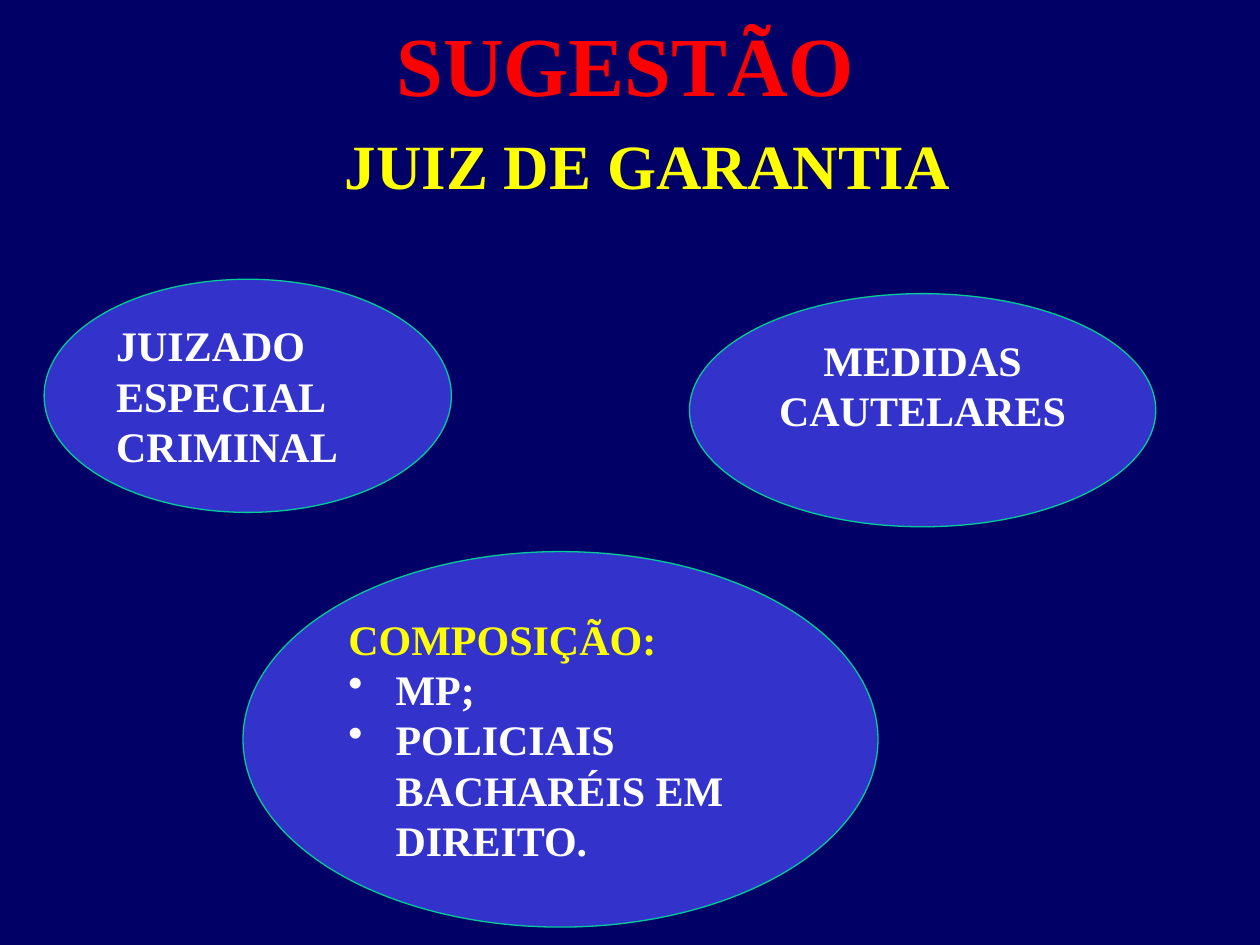
from lxml import etree
from pptx import Presentation
from pptx.dml.color import RGBColor
from pptx.enum.shapes import MSO_SHAPE
from pptx.enum.text import MSO_ANCHOR, MSO_AUTO_SIZE, PP_ALIGN
from pptx.oxml.ns import qn
from pptx.util import Cm, Pt

NAVY = RGBColor(0x00, 0x00, 0x66)
BLUE = RGBColor(0x33, 0x33, 0xCC)
GREEN = RGBColor(0x00, 0xCC, 0x99)
RED = RGBColor(0xFF, 0x00, 0x00)
YELLOW = RGBColor(0xFF, 0xFF, 0x00)
WHITE = RGBColor(0xFF, 0xFF, 0xFF)

OVAL = MSO_SHAPE.OVAL
TOP = MSO_ANCHOR.TOP
NO_FIT = MSO_AUTO_SIZE.NONE
LEFT, CENTER, JUSTIFY = PP_ALIGN.LEFT, PP_ALIGN.CENTER, PP_ALIGN.JUSTIFY

FONT = "Times New Roman"
BULLET_INDENT = Cm(0.95)

# Content: paragraphs are (text, colour, bulleted); places are in cm
TITLE = [("SUGESTÃO", RED, False)]
TITLE_PLACE = (0.1, 0.13, 25, 2.29)
SUBTITLE = [("JUIZ DE GARANTIA", YELLOW, False)]
SUBTITLE_PLACE = (6.7, 2.42, 14.2, 3.3)
OVALS = [
    ((0.89, 5.63, 8.21, 4.7), LEFT,
     [("JUIZADO ESPECIAL CRIMINAL", WHITE, False)]),
    ((13.9, 5.92, 9.4, 4.7), CENTER,
     [("MEDIDAS CAUTELARES", WHITE, False)]),
    ((4.9, 11.12, 12.8, 7.57), LEFT,
     [("COMPOSIÇÃO:", YELLOW, False),
      ("MP;", WHITE, True),
      ("POLICIAIS BACHARÉIS EM DIREITO.", WHITE, True)]),
]


def add_bullet(para):
    properties = para._p.get_or_add_pPr()
    properties.set("marL", str(BULLET_INDENT))
    properties.set("indent", str(-BULLET_INDENT))
    etree.SubElement(properties, qn("a:buChar")).set("char", "•")


def write(box, paragraphs, size, alignment):
    frame = box.text_frame
    frame.word_wrap = True
    frame.auto_size = NO_FIT
    frame.vertical_anchor = TOP
    frame.margin_left = frame.margin_right = Cm(0.25)
    frame.margin_top = frame.margin_bottom = Cm(0.13)
    for index, (text, color, bulleted) in enumerate(paragraphs):
        para = frame.add_paragraph() if index else frame.paragraphs[0]
        para.alignment = alignment
        if bulleted:
            add_bullet(para)
        span = para.add_run()
        span.text = text
        span.font.name = FONT
        span.font.size = Pt(size)
        span.font.bold = True
        span.font.color.rgb = color


# Deck and background
deck = Presentation()
deck.slide_width, deck.slide_height = Cm(25.4), Cm(19.05)
page = deck.slides.add_slide(deck.slide_layouts.get_by_name("Title Only"))
page.background.fill.solid()
page.background.fill.fore_color.rgb = NAVY

# Title and subtitle
title = page.shapes.title
title.left, title.top, title.width, title.height = map(Cm, TITLE_PLACE)
write(title, TITLE, 48, CENTER)
subtitle = page.shapes.add_textbox(*map(Cm, SUBTITLE_PLACE))
write(subtitle, SUBTITLE, 36, JUSTIFY)

# Ovals
for place, alignment, paragraphs in OVALS:
    oval = page.shapes.add_shape(OVAL, *map(Cm, place))
    oval.shadow.inherit = False
    oval.fill.solid()
    oval.fill.fore_color.rgb = BLUE
    oval.line.color.rgb = GREEN
    oval.line.width = Pt(0.75)
    write(oval, paragraphs, 24, alignment)

deck.save("out.pptx")
